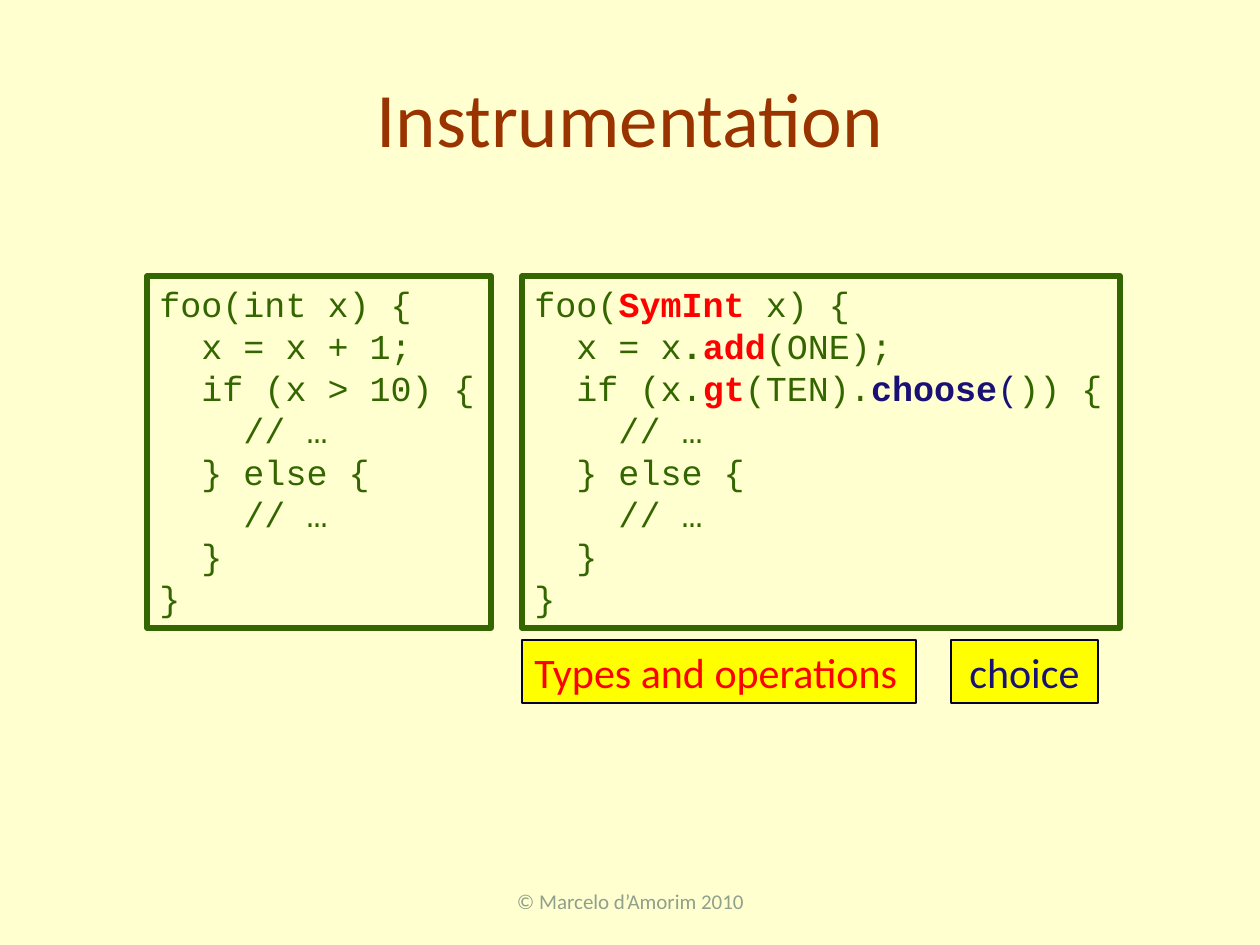
from pptx import Presentation
from pptx.dml.color import RGBColor
from pptx.enum.shapes import MSO_SHAPE as Shape
from pptx.enum.text import MSO_ANCHOR as Anchor, MSO_AUTO_SIZE as Fit, PP_ALIGN as Align
from pptx.util import Emu, Pt

SCALE = 914400 / 126
COLORS = {
    "back": "FFFFD0", "title": "993300", "foot": "90A08C", "code": "336600",
    "red": "FF0000", "navy": "191274", "label": "FFFF00", "edge": "05022C",
}
TAIL = ["    // …", "  } else {", "    // …", "  }", "}"]
BEFORE = ["foo(int x) {", "  x = x + 1;", "  if (x > 10) {"] + TAIL
# A line is plain text or a list of (text, color, bold) runs.
AFTER = [
    [("foo(", "code", False), ("SymInt ", "red", True), ("x) {", "code", False)],
    [("  x = x", "code", False), (".", "code", True), ("add", "red", True),
     ("(ONE);", "code", False)],
    [("  if (x.", "code", False), ("gt", "red", True), ("(TEN).", "code", False),
     ("choose", "navy", True), ("(", "navy", False), (")) {", "code", False)],
] + TAIL


def px(n):
    return Emu(round(n * SCALE))


def rgb(name):
    return RGBColor.from_string(COLORS[name])


def write(frame, lines, size, color, font="Calibri", align=Align.LEFT):
    for i, line in enumerate(lines):
        para = frame.add_paragraph() if i else frame.paragraphs[0]
        para.alignment = align
        runs = [(line, color, False)] if isinstance(line, str) else line
        for text, tint, bold in runs:
            run = para.add_run()
            run.text = text
            run.font.name = font
            run.font.size = Pt(size)
            run.font.bold = bold
            run.font.color.rgb = rgb(tint)


def add_text(slide, box, text, size, color):
    """Add centred text without a frame."""
    frame = slide.shapes.add_textbox(*map(px, box)).text_frame
    frame.word_wrap = True
    frame.vertical_anchor = Anchor.MIDDLE
    write(frame, [text], size, color, align=Align.CENTER)


def add_box(slide, box, edge, width, fill=None, wrap=True):
    """Add a framed rectangle and return its text frame."""
    rect = slide.shapes.add_shape(Shape.RECTANGLE, *map(px, box))
    rect.shadow.inherit = False
    if fill:
        rect.fill.solid()
        rect.fill.fore_color.rgb = rgb(fill)
    else:
        rect.fill.background()
    rect.line.color.rgb = rgb(edge)
    rect.line.width = Pt(width)
    frame = rect.text_frame
    frame.word_wrap = wrap
    frame.auto_size = Fit.SHAPE_TO_FIT_TEXT
    frame.vertical_anchor = Anchor.TOP
    return frame


def add_code(slide, left, width, lines):
    frame = add_box(slide, (left, 276, width, 352), "code", 3, wrap=False)
    write(frame, lines, 20, "code", "Courier New")


def add_label(slide, left, width, text, color, align):
    frame = add_box(slide, (left, 640, width, 63), "edge", 0.75, "label")
    write(frame, [text], 24, color, align=align)


def main():
    deck = Presentation()
    deck.slide_width, deck.slide_height = px(1260), px(945)
    slide = deck.slides.add_slide(deck.slide_layouts[6])
    slide.background.fill.solid()
    slide.background.fill.fore_color.rgb = rgb("back")

    add_text(slide, (63, 38, 1134, 157), "Instrumentation", 44, "title")
    add_text(slide, (431, 876, 399, 50), "© Marcelo d’Amorim 2010", 12, "foot")
    add_code(slide, 147, 344, BEFORE)
    add_code(slide, 522, 598, AFTER)
    add_label(slide, 522, 394, "Types and operations", "red", Align.LEFT)
    add_label(slide, 951, 147, "choice", "navy", Align.CENTER)
    deck.save("out.pptx")


if __name__ == "__main__":
    main()
